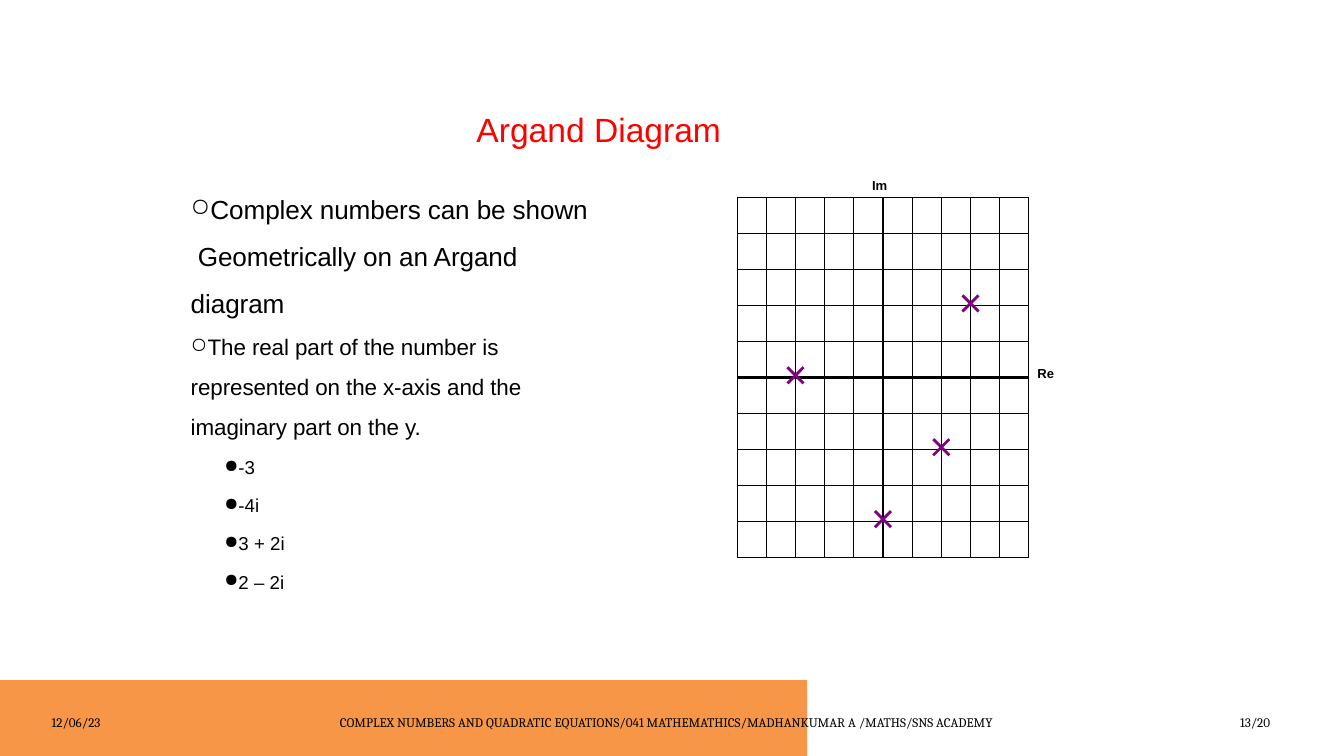
from pptx import Presentation
from pptx.dml.color import RGBColor
from pptx.enum.shapes import MSO_CONNECTOR as Conn, MSO_SHAPE as Shape
from pptx.enum.text import MSO_ANCHOR as Anchor, PP_ALIGN as Align
from pptx.oxml.ns import qn
from pptx.util import Inches, Pt
from lxml.etree import SubElement

BLACK = RGBColor(0, 0, 0)
RED = RGBColor(255, 0, 0)
ORANGE = RGBColor(0xF7, 0x96, 0x46)
PURPLE = RGBColor(0x80, 0, 0x80)


def write(para, text, size=14, font="Arial", color=BLACK, bold=False,
          align=Align.LEFT, bullet=None, left=0, hang=0, tab=0, gap=0,
          lines=None, track=0):
    """Fill a paragraph; left, hang and tab are inches, gap and track points."""
    para.text = text
    props = para._p.get_or_add_pPr()
    props.set("marL", str(Inches(left)))
    props.set("indent", str(-Inches(hang)))
    if bullet:
        tint = SubElement(props, qn("a:buClr"))
        SubElement(tint, qn("a:srgbClr"), val=str(BLACK))
        SubElement(props, qn("a:buSzPct"), val="95000")
        SubElement(props, qn("a:buChar"), char=bullet)
        tabs = SubElement(props, qn("a:tabLst"))
        SubElement(tabs, qn("a:tab"), pos=str(Inches(tab)), algn="l")
    para.alignment = align
    para.space_before = Pt(gap)
    if lines:
        para.line_spacing = lines
    for run in para.runs:
        run.font.size = Pt(size)
        run.font.name = font
        run.font.bold = bold
        run.font.color.rgb = color
        if track:
            run._r.get_or_add_rPr().set("spc", str(round(track * 100)))


def draw(strokes, width=1, color=BLACK):
    """Draw separate strokes (x1, y1, x2, y2 in inches) as one outline."""
    ends = [((Inches(a), Inches(b)), (Inches(c), Inches(d)))
            for a, b, c, d in strokes]
    pen = slide.shapes.build_freeform(*ends[0][0])
    for start, end in ends:
        if start != ends[0][0]:
            pen.move_to(*start)
        pen.add_line_segments([end], close=False)
    shape = pen.convert_to_shape()
    shape.shadow.inherit = False
    shape.fill.background()
    shape.line.width = Pt(width)
    shape.line.color.rgb = color


prs = Presentation()
prs.slide_width, prs.slide_height = Inches(20), Inches(11.25)
slide = prs.slides.add_slide(prs.slide_layouts[5])

# Title
title = slide.shapes.title
title.left, title.top = Inches(6.99), Inches(1.57)
title.width, title.height = Inches(3.86), Inches(0.71)
title.text_frame.word_wrap = False
title.text_frame.vertical_anchor = Anchor.TOP
write(title.text_frame.paragraphs[0], "Argand Diagram", size=36, color=RED)

# Footer
band = slide.shapes.add_shape(
    Shape.RECTANGLE, 0, Inches(10.12), Inches(12.01), Inches(1.13))
band.shadow.inherit = False
band.fill.solid()
band.fill.fore_color.rgb = ORANGE
band.line.fill.background()

footer = "COMPLEX NUMBERS AND QUADRATIC EQUATIONS/041 MATHEMATHICS/MADHANKUMAR A /MATHS/SNS ACADEMY"
for text, left, width, align in (
        ("12/06/23", 0.67, 2.33, Align.LEFT),
        (footer, 3.67, 12.5, Align.CENTER),
        ("13/20", 16.67, 2.33, Align.RIGHT)):
    box = slide.shapes.add_textbox(
        Inches(left), Inches(10.54), Inches(width), Inches(0.41))
    box.text_frame.word_wrap = True
    box.text_frame.vertical_anchor = Anchor.MIDDLE
    write(box.text_frame.paragraphs[0], text, font="Cambria", align=align)

# Explanation
body = slide.shapes.add_textbox(
    Inches(2.73), Inches(2.59), Inches(6.15), Inches(6.31)).text_frame
body.word_wrap = True
write(body.paragraphs[0],
      "Complex numbers can be shown\v Geometrically on an Argand diagram",
      size=28, bullet="○", left=0.01, tab=0.31, lines=1.5, track=-0.1)
write(body.add_paragraph(),
      "The real part of the number is represented on the x-axis and the "
      "imaginary part on the y.",
      size=24, bullet="○", left=0.01, tab=0.31, gap=1, lines=1.5, track=-0.1)
for number in ("-3", "-4i", "3 + 2i", "2 – 2i"):
    para = body.add_paragraph()
    para.level = 1
    write(para, number, size=20, bullet="●", left=0.72, hang=0.21, tab=0.72,
          gap=4.8, lines=1.5)

# Grid, ten cells each way, with heavy axes through the middle
COUNT, HALF = 10, 5
LEFT, TOP, WIDE, HIGH = 10.97, 2.94, 4.34, 5.35
STEP_X, STEP_Y = WIDE / COUNT, HIGH / COUNT
RIGHT, BASE = LEFT + WIDE, TOP + HIGH
MID_X, MID_Y = LEFT + WIDE / 2, TOP + HIGH / 2
cols = [(LEFT + i * STEP_X, TOP, LEFT + i * STEP_X, BASE)
        for i in range(COUNT + 1)]
rows = [(LEFT, TOP + i * STEP_Y, RIGHT, TOP + i * STEP_Y)
        for i in range(COUNT + 1)]
draw(cols[1:HALF])
draw(cols[HALF + 1:COUNT] + rows[1:HALF])
draw(rows[HALF + 1:COUNT] + [cols[0], cols[COUNT], rows[0], rows[COUNT]])

for ends in (cols[HALF], rows[HALF]):
    axis = slide.shapes.add_connector(
        Conn.STRAIGHT, *[Inches(end) for end in ends])
    axis.line.width = Pt(3)
    axis.line.color.rgb = BLACK
    SubElement(axis._element.spPr, qn("a:effectLst"))

# Crosses at the plotted numbers, set slightly above the grid points
ARM, LIFT = 0.12, 0.03
marks = []
for real, imag in ((3, 2), (-3, 0), (0, -4), (2, -2)):
    x, y = MID_X + real * STEP_X, MID_Y - imag * STEP_Y - LIFT
    marks += [(x - ARM, y - rise, x + ARM, y + rise) for rise in (ARM, -ARM)]
draw(marks, 3, PURPLE)

# Axis names
for text, left, top, width in (("Re", 15.33, 5.39, 0.47),
                               ("Im", 12.87, 2.59, 0.44)):
    box = slide.shapes.add_textbox(
        Inches(left), Inches(top), Inches(width), Inches(0.34))
    box.text_frame.word_wrap = False
    write(box.text_frame.paragraphs[0], text, bold=True, left=0.01)

prs.save("out.pptx")
